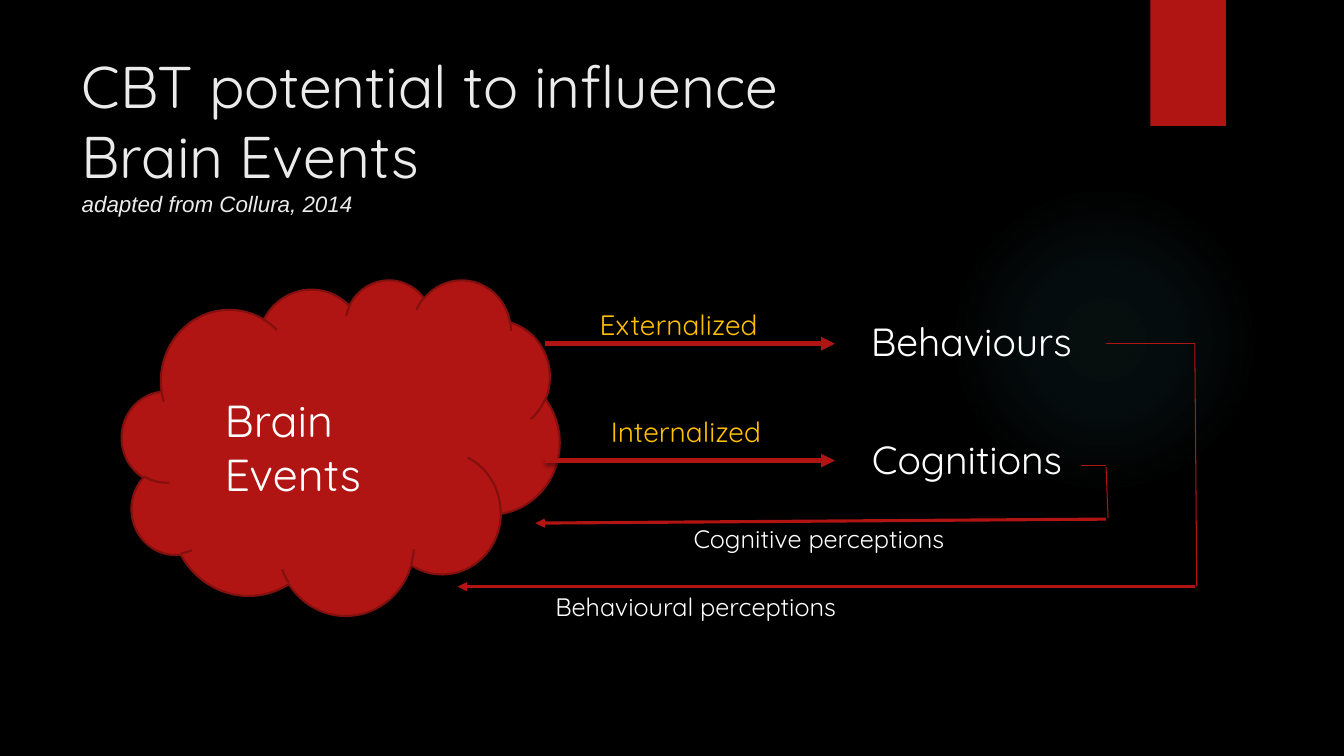
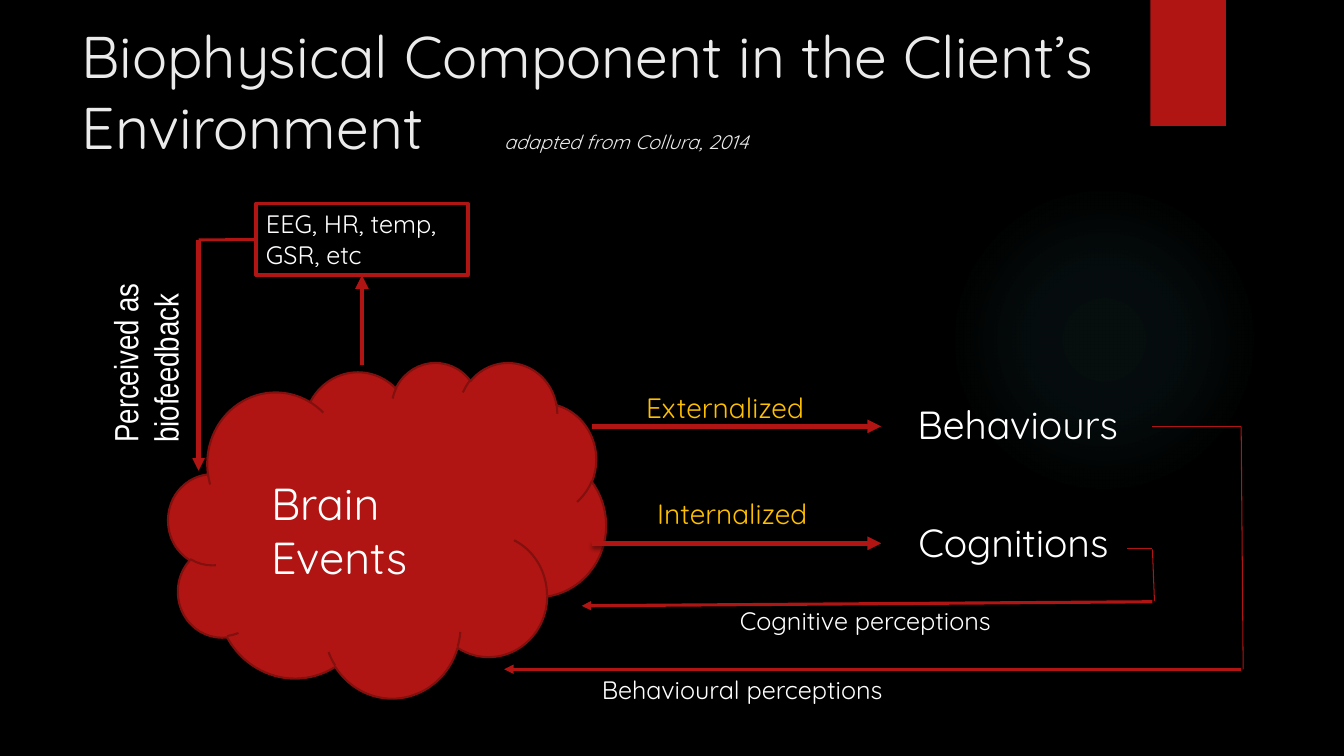
from dataclasses import dataclass

from lxml import etree
from pptx import Presentation
from pptx.dml.color import RGBColor
from pptx.enum.shapes import MSO_CONNECTOR, MSO_SHAPE
from pptx.enum.text import MSO_ANCHOR, MSO_AUTO_SIZE, PP_ALIGN
from pptx.oxml import parse_xml
from pptx.oxml.ns import nsdecls, qn
from pptx.util import Inches, Pt

STRAIGHT = MSO_CONNECTOR.STRAIGHT
OVAL, RECTANGLE, CLOUD = MSO_SHAPE.OVAL, MSO_SHAPE.RECTANGLE, MSO_SHAPE.CLOUD
TOP, LEFT = MSO_ANCHOR.TOP, PP_ALIGN.LEFT
FIT_SHAPE, NO_FIT = MSO_AUTO_SIZE.SHAPE_TO_FIT_TEXT, MSO_AUTO_SIZE.NONE
LEFT_SIDE, BOTTOM_SIDE = 1, 2

COLORS = {
    "night": "000000",
    "red": "B01513",
    "dark_red": "82100E",
    "title": "EBEBEB",
    "white": "FFFFFF",
    "amber": "FFC000",
    "glow": "50B9C1",
}
MAIN_FONT = "Quicksand"


@dataclass(frozen=True)
class Label:
    text: str
    x: float
    y: float
    width: float
    height: float
    size: int
    color: str = "white"
    font: str = MAIN_FONT


@dataclass(frozen=True)
class Link:
    start: tuple[float, float]
    end: tuple[float, float]
    weight: float = 0.75
    arrow: bool = False
    shadow: bool = False


@dataclass(frozen=True)
class TitleRun:
    text: str
    size: int
    font: str = MAIN_FONT
    italic: bool = False


LABELS = (
    Label("Brain Events", 2.13, 3.85, 2.2, 1.18, 32),
    Label("Behaviours", 8.54, 3.1, 3.54, 0.57, 28),
    Label("Cognitions", 8.55, 4.27, 3.54, 0.57, 28),
    Label("Behavioural perceptions", 5.41, 5.82, 5.08, 0.4, 18),
    Label("Cognitive perceptions", 6.78, 5.14, 5.08, 0.4, 18),
    Label("Externalized", 5.85, 3, 2.43, 0.44, 20, "amber"),
    Label("Internalized", 5.96, 4.06, 2.43, 0.44, 20, "amber"),
)
LINKS = (
    Link((5.41, 3.41), (8.28, 3.41), 3.25, True, True),
    Link((10.97, 3.41), (11.85, 3.41)),
    Link((11.85, 3.41), (11.87, 5.82)),
    Link((11.85, 5.82), (4.54, 5.82), 2.25, True, True),
    Link((5.41, 4.57), (8.28, 4.57), 3.25, True, True),
    Link((10.72, 4.62), (10.97, 4.62)),
    Link((10.97, 4.63), (10.99, 5.14)),
    Link((10.97, 5.15), (5.31, 5.19), 2.25, True, True),
)


def rgb(name: str) -> RGBColor:
    return RGBColor.from_string(COLORS[name])


def set_effects(shape, shadow: bool) -> None:
    effects = etree.SubElement(shape.element.spPr, qn("a:effectLst"))
    if shadow:
        effects.append(parse_xml(
            f'<a:outerShdw {nsdecls("a")} blurRad="{Pt(3)}" dist="{Pt(2)}" '
            f'dir="5400000" rotWithShape="0"><a:srgbClr val="{COLORS["night"]}">'
            '<a:alpha val="45000"/></a:srgbClr></a:outerShdw>'
        ))


def style_run(run, size: float, font: str, color: str) -> None:
    run.font.size = Pt(size)
    run.font.name = font
    run.font.color.rgb = rgb(color)


def add_label(slide, label: Label, dx: float = 0, dy: float = 0):
    box = slide.shapes.add_textbox(
        Inches(label.x + dx), Inches(label.y + dy),
        Inches(label.width), Inches(label.height),
    )
    frame = box.text_frame
    frame.word_wrap = True
    frame.auto_size = FIT_SHAPE
    run = frame.paragraphs[0].add_run()
    run.text = label.text
    style_run(run, label.size, label.font, label.color)
    return box


def add_link(slide, link: Link, dx: float = 0, dy: float = 0):
    (x1, y1), (x2, y2) = link.start, link.end
    connector = slide.shapes.add_connector(
        STRAIGHT, Inches(x1 + dx), Inches(y1 + dy),
        Inches(x2 + dx), Inches(y2 + dy),
    )
    connector.line.color.rgb = rgb("red")
    connector.line.width = Pt(link.weight)
    if link.arrow:
        etree.SubElement(connector.line._get_or_add_ln(), qn("a:tailEnd"), type="triangle")
    set_effects(connector, link.shadow)
    return connector


def add_backdrop(slide) -> None:
    glow = slide.shapes.add_shape(
        OVAL, Inches(9.41), Inches(1.83), Inches(3.08), Inches(3.08)
    )
    glow.line.fill.background()
    glow.fill.background()
    stops = "".join(
        f'<a:gs pos="{place * 1000}"><a:srgbClr val="{COLORS["glow"]}">'
        f'<a:alpha val="{alpha * 1000}"/></a:srgbClr></a:gs>'
        for place, alpha in ((0, 7), (36, 6), (69, 0))
    )
    properties = glow.element.spPr
    properties.replace(properties.find(qn("a:noFill")), parse_xml(
        f'<a:gradFill {nsdecls("a")}><a:gsLst>{stops}</a:gsLst><a:path path="circle">'
        '<a:fillToRect l="50000" t="50000" r="50000" b="50000"/></a:path></a:gradFill>'
    ))
    set_effects(glow, False)
    ribbon = slide.shapes.add_shape(
        RECTANGLE, Inches(11.41), 0, Inches(0.75), Inches(1.25)
    )
    ribbon.fill.solid()
    ribbon.fill.fore_color.rgb = rgb("red")
    ribbon.line.fill.background()
    set_effects(ribbon, True)


def set_title(slide, top: float, height: float, lines: list[list[TitleRun]],
              tab: float | None = None) -> None:
    title = slide.shapes.title
    title.left, title.top = Inches(0.71), Inches(top)
    title.width, title.height = Inches(10.29), Inches(height)
    frame = title.text_frame
    frame.word_wrap = True
    frame.auto_size = NO_FIT
    frame.vertical_anchor = TOP
    paragraph = frame.paragraphs[0]
    paragraph.alignment = LEFT
    if tab is not None:
        tabs = etree.SubElement(paragraph._p.get_or_add_pPr(), qn("a:tabLst"))
        etree.SubElement(tabs, qn("a:tab"), pos=str(Inches(tab)), algn="l")
    for index, line in enumerate(lines):
        if index:
            paragraph.add_line_break()
        for part in line:
            run = paragraph.add_run()
            run.text = part.text
            style_run(run, part.size, part.font, "title")
            run.font.italic = part.italic


def add_brain_diagram(slide, dx: float = 0, dy: float = 0) -> None:
    cloud = slide.shapes.add_shape(
        CLOUD, Inches(1.21 + dx), Inches(2.77 + dy), Inches(4.34), Inches(3.33)
    )
    cloud.fill.solid()
    cloud.fill.fore_color.rgb = rgb("red")
    cloud.line.color.rgb = rgb("dark_red")
    cloud.line.width = Pt(1.5)
    cloud.shadow.inherit = False
    for link in LINKS:
        add_link(slide, link, dx, dy)
    for label in LABELS:
        add_label(slide, label, dx, dy)


def add_biofeedback_loop(slide) -> None:
    signals = add_label(slide, Label("EEG, HR, temp, GSR, etc", 2.54, 2.02, 2.1, 0.71, 18))
    signals.line.color.rgb = rgb("red")
    signals.line.width = Pt(2.5)
    measured = add_link(slide, Link((3.59, 3.62), (3.59, 2.73), 3.25, True))
    measured.end_connect(signals, BOTTOM_SIDE)
    outgoing = add_link(slide, Link((2.54, 2.38), (1.97, 2.38), 2))
    outgoing.begin_connect(signals, LEFT_SIDE)
    add_link(slide, Link((1.97, 2.38), (1.97, 4.67), 3, True))
    perceived = add_label(slide, Label(
        "Perceived as biofeedback", 0.99, 2.49, 1.01, 2, 24, font="Arial Narrow"
    ))
    perceived.element.txBody.bodyPr.set("vert", "vert270")


def main() -> None:
    deck = Presentation()
    deck.slide_width, deck.slide_height = Inches(13.33), Inches(7.5)
    backdrop = deck.slide_master.background.fill
    backdrop.solid()
    backdrop.fore_color.rgb = rgb("night")
    title_only = deck.slide_layouts.get_by_name("Title Only")

    influence = deck.slides.add_slide(title_only)
    add_backdrop(influence)
    set_title(influence, 0.44, 1.86, [
        [TitleRun("CBT potential to influence", 42)],
        [TitleRun("Brain Events", 42)],
        [TitleRun("adapted from Collura, 2014", 16, "Arial", True)],
    ])
    add_brain_diagram(influence)

    biophysical = deck.slides.add_slide(title_only)
    add_backdrop(biophysical)
    set_title(biophysical, 0.15, 1.54, [[
        TitleRun("Biophysical Component in the Client’s Environment\t", 42),
        TitleRun("adapted from Collura, 2014", 14, italic=True),
    ]], tab=4.19)
    add_brain_diagram(biophysical, 0.46, 0.82)
    add_biofeedback_loop(biophysical)

    deck.save("out.pptx")


if __name__ == "__main__":
    main()
